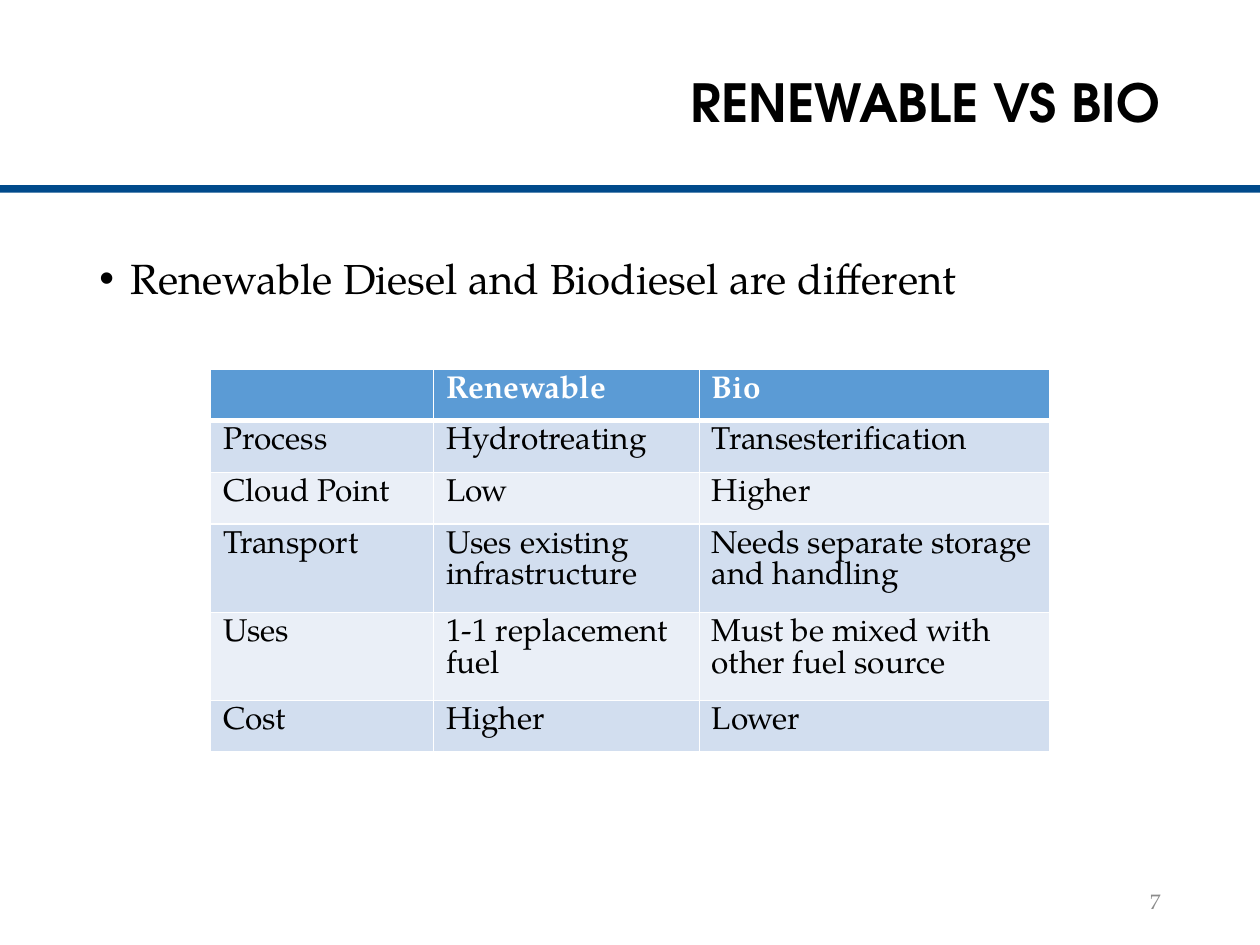
from lxml import etree
from pptx import Presentation
from pptx.dml.color import RGBColor
from pptx.enum.shapes import MSO_SHAPE
from pptx.enum.text import MSO_ANCHOR, PP_ALIGN
from pptx.oxml.ns import qn
from pptx.util import Inches, Pt

RECTANGLE = MSO_SHAPE.RECTANGLE
MIDDLE = MSO_ANCHOR.MIDDLE
RIGHT = PP_ALIGN.RIGHT
TITLE_ONLY = 5

COLORS = {
    "black": "000000", "white": "FFFFFF", "rule": "004A8B", "number": "8C8C8C",
    "header": "5B9BD5", "odd": "D2DEEF", "even": "EAEFF7",
}
HEADING = "TeX Gyre Adventor"
BODY = "TeX Gyre Pagella"


def write(frame, text, color, **formats):
    para = frame.paragraphs[0]
    span = para.add_run()
    span.text = text
    span.font.color.rgb = RGBColor.from_string(COLORS[color])
    for name, value in formats.items():
        setattr(span.font, name, value)
    return para


def add_border(cell, side, points):
    line = etree.SubElement(cell._tc.get_or_add_tcPr(), qn(f"a:ln{side}"), w=str(Pt(points)))
    fill = etree.SubElement(line, qn("a:solidFill"))
    etree.SubElement(fill, qn("a:srgbClr"), val=COLORS["white"])


deck = Presentation()
deck.slide_width, deck.slide_height = Inches(10), Inches(7.5)
page = deck.slides.add_slide(deck.slide_layouts[TITLE_ONLY])

# Rule under the title
rule = page.shapes.add_shape(RECTANGLE, Inches(0), Inches(1.47), Inches(10), Inches(0.06))
rule.shadow.inherit = False
rule.fill.solid()
rule.fill.fore_color.rgb = RGBColor.from_string(COLORS["rule"])
rule.line.fill.background()

# Title
title = page.shapes.title
title.left, title.top = Inches(1.97), Inches(0.4)
title.width, title.height = Inches(7.34), Inches(0.88)
title.text_frame.vertical_anchor = MIDDLE
para = write(title.text_frame, "RENEWABLE VS BIO", "black", name=HEADING, size=Pt(30), bold=True)
para.alignment = RIGHT
para.line_spacing = 0.9

# Bullet
box = page.shapes.add_textbox(Inches(0.69), Inches(2), Inches(8.62), Inches(4.76))
box.text_frame.word_wrap = True
para = write(box.text_frame, "Renewable Diesel and Biodiesel are different", "black",
             name=BODY, size=Pt(24))
para.line_spacing = 0.9
properties = para._p.get_or_add_pPr()
properties.set("marL", str(Inches(0.25)))
properties.set("indent", str(Inches(-0.25)))
etree.SubElement(properties, qn("a:buFont"), typeface="Arial")
etree.SubElement(properties, qn("a:buChar"), char="•")

# Comparison table
ROWS = [
    ("", "Renewable", "Bio"),
    ("Process", "Hydrotreating", "Transesterification"),
    ("Cloud Point", "Low", "Higher"),
    ("Transport", "Uses existing infrastructure", "Needs separate storage and handling"),
    ("Uses", "1-1 replacement fuel", "Must be mixed with other fuel source"),
    ("Cost", "Higher", "Lower"),
]
WIDTHS = [1.77, 2.11, 2.78]
ROW_HEIGHT = 0.41
table = page.shapes.add_table(len(ROWS), len(WIDTHS), Inches(1.67), Inches(2.93),
                              Inches(sum(WIDTHS)), Inches(ROW_HEIGHT * len(ROWS))).table
for column, width in zip(table.columns, WIDTHS):
    column.width = Inches(width)
for r, texts in enumerate(ROWS):
    is_header = r == 0
    table.rows[r].height = Inches(ROW_HEIGHT)
    for c, text in enumerate(texts):
        cell = table.cell(r, c)
        for side in "LRTB":
            thick = (is_header and side == "B") or (r == 1 and side == "T")
            add_border(cell, side, 3 if thick else 1)
        cell.fill.solid()
        band = "header" if is_header else "odd" if r % 2 else "even"
        cell.fill.fore_color.rgb = RGBColor.from_string(COLORS[band])
        if text:
            write(cell.text_frame, text, "white" if is_header else "black",
                  name=BODY, size=Pt(18), bold=is_header)

# Slide number
box = page.shapes.add_textbox(Inches(7.06), Inches(6.95), Inches(2.25), Inches(0.4))
box.text_frame.word_wrap = True
box.text_frame.vertical_anchor = MIDDLE
write(box.text_frame, "7", "number", name=BODY, size=Pt(12)).alignment = RIGHT

deck.save("out.pptx")
